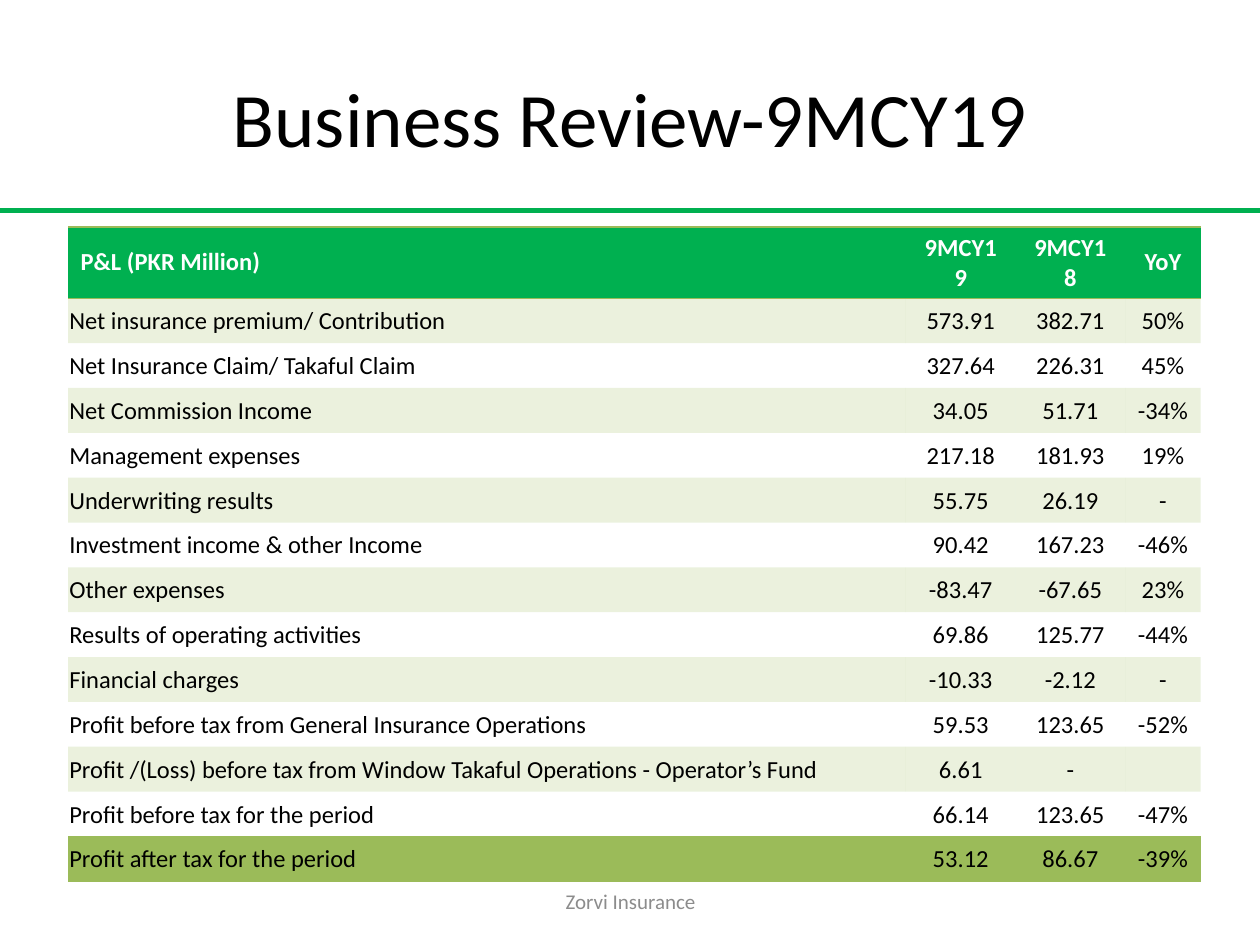
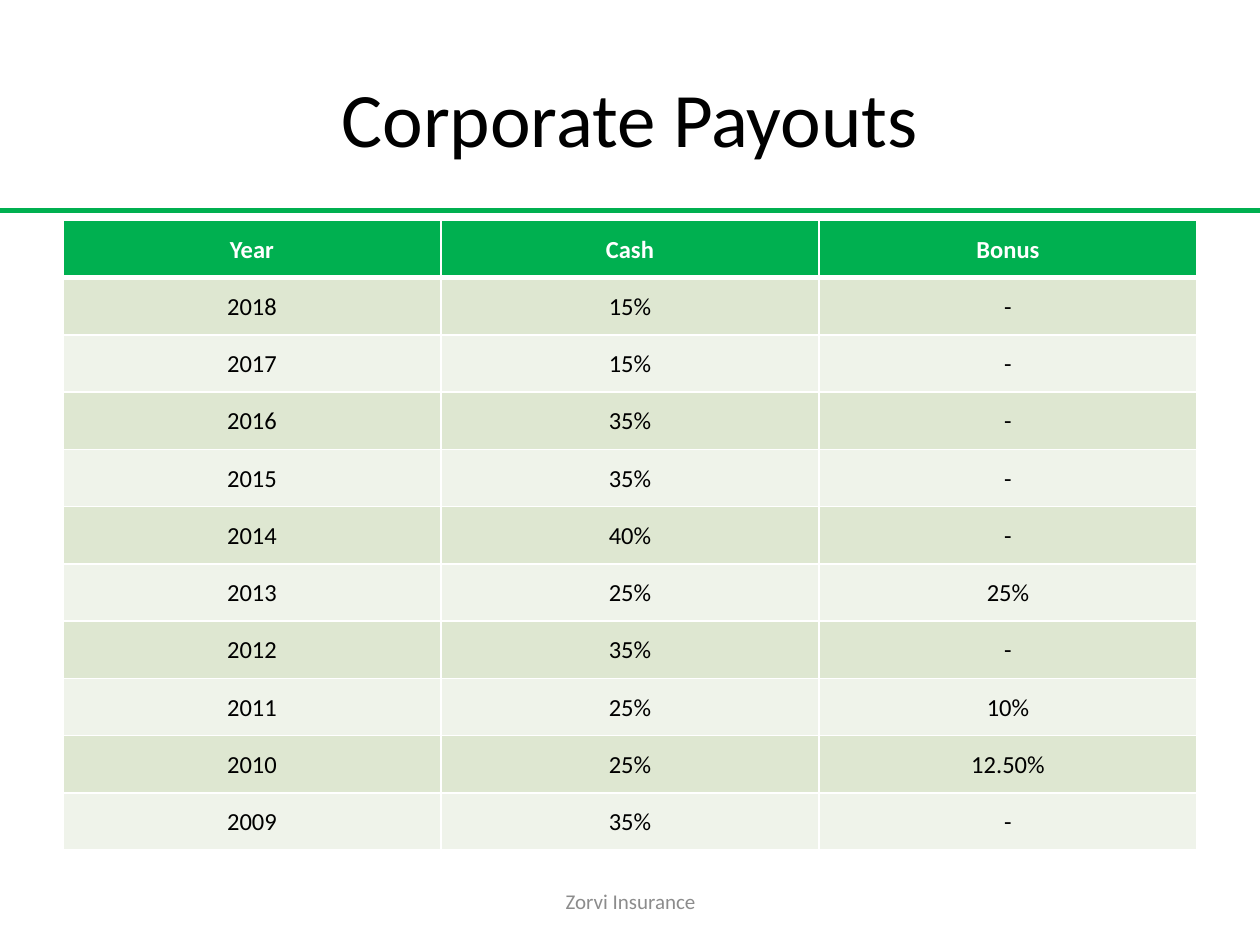
from lxml import etree
from pptx import Presentation
from pptx.dml import color
from pptx.enum import shapes, text
from pptx.oxml import ns
from pptx.util import Inches, Pt

GREEN = color.RGBColor(0x00, 0xB0, 0x50)
OLIVE = color.RGBColor(0x9B, 0xBB, 0x59)
SAGE = color.RGBColor(0xDE, 0xE7, 0xD1)
PALE_SAGE = color.RGBColor(0xEF, 0xF3, 0xEA)
GREY = color.RGBColor(0x8C, 0x8C, 0x8C)
BLACK = color.RGBColor(0, 0, 0)
WHITE = color.RGBColor(0xFF, 0xFF, 0xFF)

FONT = "Calibri"
FOOTER = "Zorvi Insurance"
PLAIN_TABLE_STYLE = "{2D5ABB26-0587-4C30-8999-92F81FD0307C}"
TITLE_BOX = (0.5, 0.3, 9, 1.25)
FOOTER_BOX = (3.42, 6.95, 3.17, 0.4)
RULE_Y = 1.67
TIGHT = dict(margin_left=Inches(0.01), margin_right=Inches(0.01),
             margin_top=Inches(0.01), margin_bottom=0)

RESULTS = [
    ("P&L (PKR Million)", "9MCY19", "9MCY18", "YoY"),
    ("Net insurance premium/ Contribution", "573.91", "382.71", "50%"),
    ("Net Insurance Claim/ Takaful Claim", "327.64", "226.31", "45%"),
    ("Net Commission Income", "34.05", "51.71", "-34%"),
    ("Management expenses", "217.18", "181.93", "19%"),
    ("Underwriting results", "55.75", "26.19", "-"),
    ("Investment income & other Income", "90.42", "167.23", "-46%"),
    ("Other expenses", "-83.47", "-67.65", "23%"),
    ("Results of operating activities", "69.86", "125.77", "-44%"),
    ("Financial charges", "-10.33", "-2.12", "-"),
    ("Profit before tax from General Insurance Operations", "59.53", "123.65", "-52%"),
    ("Profit /(Loss) before tax from Window Takaful Operations - Operator’s Fund",
     "6.61", "-", ""),
    ("Profit before tax for the period", "66.14", "123.65", "-47%"),
    ("Profit after tax for the period", "53.12", "86.67", "-39%"),
]
PAYOUTS = [
    ("Year", "Cash", "Bonus"),
    ("2018", "15%", "-"),
    ("2017", "15%", "-"),
    ("2016", "35%", "-"),
    ("2015", "35%", "-"),
    ("2014", "40%", "-"),
    ("2013", "25%", "25%"),
    ("2012", "35%", "-"),
    ("2011", "25%", "10%"),
    ("2010", "25%", "12.50%"),
    ("2009", "35%", "-"),
]


def apply(target, values):
    """Set each named attribute on the target."""
    for name, value in values.items():
        setattr(target, name, value)


def write(paragraph, words, size, ink, bold=False, centred=True):
    """Put one formatted run into a paragraph."""
    paragraph.alignment = text.PP_ALIGN.CENTER if centred else text.PP_ALIGN.LEFT
    if words:
        run = paragraph.add_run()
        run.text = words
        apply(run.font, dict(name=FONT, size=Pt(size), bold=bold))
        run.font.color.rgb = ink


def add_label(slide, box, words, size, ink):
    """Add centred text in a box."""
    frame = slide.shapes.add_textbox(*map(Inches, box)).text_frame
    apply(frame, dict(word_wrap=True, vertical_anchor=text.MSO_ANCHOR.MIDDLE))
    write(frame.paragraphs[0], words, size, ink)


def add_page(deck, title):
    """Add a slide with the shared rule, title and footer."""
    slide = deck.slides.add_slide(deck.slide_layouts[6])
    rule = slide.shapes.add_connector(
        shapes.MSO_CONNECTOR.STRAIGHT, 0, Inches(RULE_Y), deck.slide_width, Inches(RULE_Y))
    rule.line.color.rgb = GREEN
    rule.line.width = Pt(3)
    etree.SubElement(rule.element.spPr, ns.qn("a:effectLst"))
    add_label(slide, TITLE_BOX, title, 44, BLACK)
    add_label(slide, FOOTER_BOX, FOOTER, 12, GREY)
    return slide


def set_borders(cell, borders):
    """Draw the given cell sides, a dict of side to colour and points."""
    properties = cell._tc.get_or_add_tcPr()
    for side in "LRTB":
        if side in borders:
            ink, points = borders[side]
            line = etree.SubElement(properties, ns.qn("a:ln" + side), w=str(Pt(points)))
            fill = etree.SubElement(line, ns.qn("a:solidFill"))
            etree.SubElement(fill, ns.qn("a:srgbClr"), val=str(ink))


def set_fill(cell, ink, opacity=100):
    """Fill a cell with a colour, or leave it clear."""
    if ink is None:
        cell.fill.background()
        return
    cell.fill.solid()
    cell.fill.fore_color.rgb = ink
    if opacity < 100:
        tint = cell._tc.tcPr.find(".//" + ns.qn("a:srgbClr"))
        etree.SubElement(tint, ns.qn("a:alpha"), val=str(opacity * 1000))


def add_grid(slide, box, rows, widths, header_height):
    """Add an unstyled table with green headings and yield its cells."""
    frame = slide.shapes.add_table(len(rows), len(widths), *map(Inches, box))
    table = frame.table
    table._tbl.tblPr.find(ns.qn("a:tableStyleId")).text = PLAIN_TABLE_STYLE
    for column, width in zip(table.columns, widths):
        column.width = Inches(width)
    body_height = (box[3] - header_height) / (len(rows) - 1)
    for r, values in enumerate(rows):
        table.rows[r].height = Inches(body_height if r else header_height)
        for c, value in enumerate(values):
            cell = table.cell(r, c)
            cell.vertical_anchor = text.MSO_ANCHOR.MIDDLE
            yield r, c, cell, value


def add_results(slide, box):
    """Add the profit and loss table."""
    last = len(RESULTS) - 1
    edge = (OLIVE, 1)
    for r, c, cell, value in add_grid(slide, box, RESULTS, (6.65, 0.87, 0.87, 0.6), 0.49):
        write(cell.text_frame.paragraphs[0], value, 14,
              BLACK if r else WHITE, bold=r == 0, centred=c > 0)
        if r == 0:
            set_borders(cell, dict(T=edge, B=edge))
            set_fill(cell, GREEN)
            continue
        apply(cell, TIGHT)
        if r == last:
            set_borders(cell, dict(B=edge))
        set_fill(cell, OLIVE if r % 2 else None, 20)


def add_payouts(slide, box):
    """Add the table of yearly payouts."""
    header_height = box[3] / len(PAYOUTS)
    thin, thick = (WHITE, 1), (WHITE, 3)
    for r, _, cell, value in add_grid(slide, box, PAYOUTS, (3, 3, 3), header_height):
        write(cell.text_frame.paragraphs[0], value, 14, BLACK if r else WHITE, bold=r == 0)
        apply(cell, TIGHT)
        set_borders(cell, dict(L=thin, R=thin, T=thick if r == 1 else thin,
                               B=thin if r else thick))
        set_fill(cell, GREEN if r == 0 else SAGE if r % 2 else PALE_SAGE)


def main():
    """Build both slides and save them."""
    deck = Presentation()
    apply(deck, dict(slide_width=Inches(10), slide_height=Inches(7.5)))
    add_results(add_page(deck, "Business Review-9MCY19"), (0.54, 1.8, 8.98, 5.12))
    add_payouts(add_page(deck, "Corporate Payouts"), (0.5, 1.75, 9, 5))
    deck.save("out.pptx")


if __name__ == "__main__":
    main()
